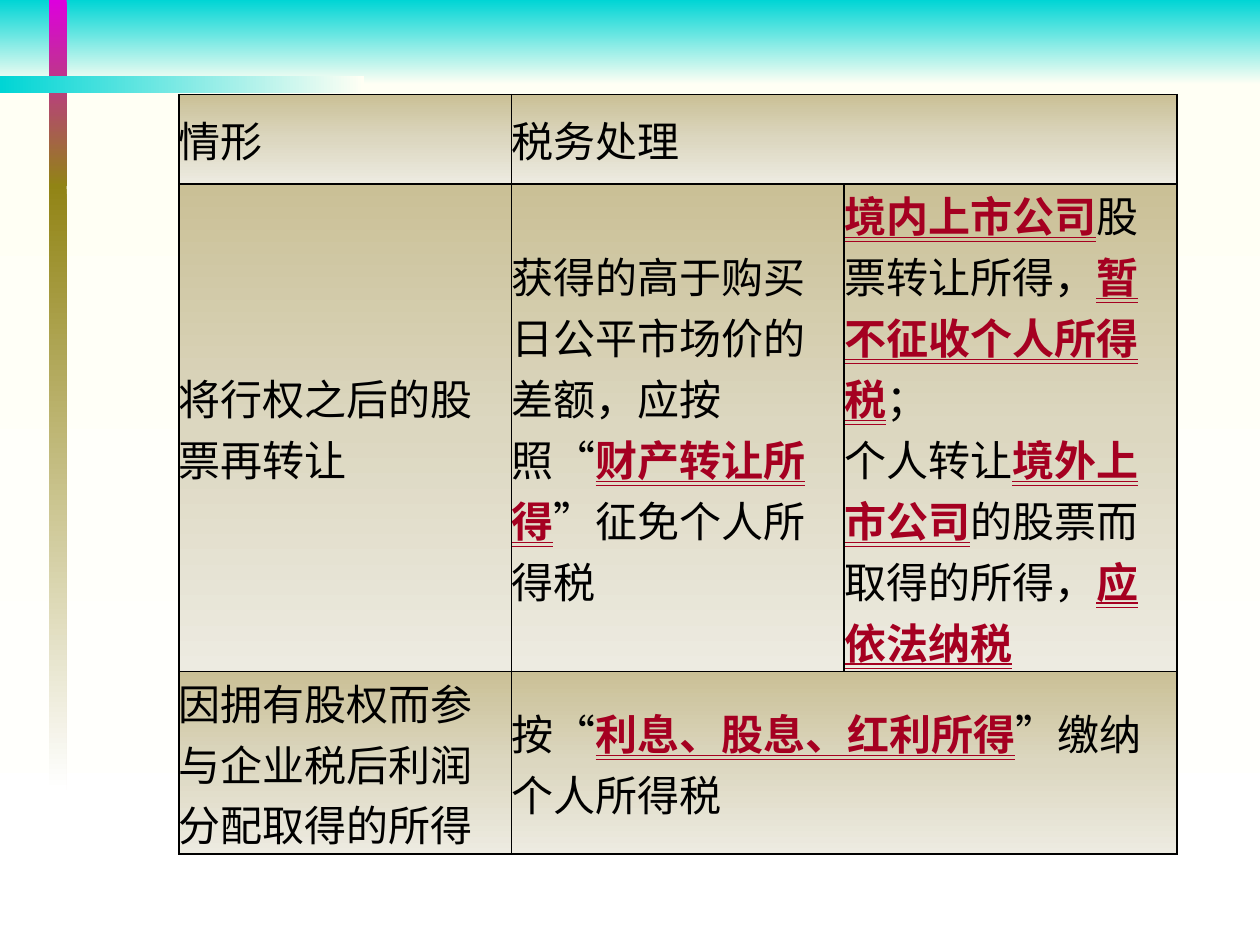
from lxml.etree import SubElement
from pptx import Presentation
from pptx.dml.color import RGBColor
from pptx.enum.shapes import MSO_SHAPE
from pptx.enum.text import MSO_ANCHOR, MSO_UNDERLINE
from pptx.oxml import parse_xml
from pptx.oxml.ns import nsdecls, qn
from pptx.util import Inches, Pt

COLORS = {"cyan": "00D5D5", "cream": "FFFFF4", "white": "FFFFFF",
          "magenta": "DD00DD", "olive": "918415", "black": "000000",
          "red": "A50021", "sand": "CAC096", "beige": "DCD7C0", "pale": "EDEBE1"}
CJK_FONT, LATIN_FONT = "Noto Sans CJK SC", "Times New Roman"
WIDTH, HEIGHT = 10, 7.5

# Background bands: left, top, width, height, gradient colours, angle
BANDS = [
    (0, 0, WIDTH, 0.67, ("cyan", "cream"), 90),
    (0, 0.67, WIDTH, HEIGHT - 0.67, ("cream", "white"), 90),
    (0.39, 0, 0.14, 1.48, ("magenta", "olive"), 90),
    (0.39, 1.46, 0.14, 4.81, ("olive", "white"), 90),
    (0, 0.6, 2.89, 0.14, ("cyan", "cream"), 0),
]

# Each cell is split at "|": every second piece is emphasised; None is merged leftwards
ROWS = [
    ["情形", "税务处理", None],
    ["将行权之后的股票再转让",
     "获得的高于购买日公平市场价的差额，应按照“|财产转让所得|”征免个人所得税",
     "|境内上市公司|股票转让所得，|暂不征收个人所得税|；\n个人转让"
     "|境外上市公司|的股票而取得的所得，|应依法纳税"],
    ["因拥有股权而参与企业税后利润分配取得的所得",
     "按“|利息、股息、红利所得|”缴纳个人所得税", None],
]
ROW_HEIGHTS = [0.71, 3.2, 1.43]
COLUMN_WIDTH = 2.64
TABLE_LEFT, TABLE_TOP = 1.42, 0.75


def set_gradient(fill, element, names, angle):
    """Spread the named colours evenly over a linear gradient."""
    fill.gradient()
    gradient = next(element.iter(qn("a:gradFill")))
    stops = gradient.find(qn("a:gsLst"))
    for stop in list(stops):
        stops.remove(stop)
    for index, name in enumerate(names):
        position = 100000 * index // (len(names) - 1)
        stop = SubElement(stops, qn("a:gs"), pos=str(position))
        SubElement(stop, qn("a:srgbClr"), val=COLORS[name])
    gradient.find(qn("a:lin")).set("ang", str(angle * 60000))


def set_borders(cell):
    properties = cell._tc.get_or_add_tcPr()
    for index, side in enumerate("LRTB"):
        properties.insert(index, parse_xml(
            f'<a:ln{side} {nsdecls("a")} w="12700"><a:solidFill>'
            f'<a:srgbClr val="{COLORS["black"]}"/></a:solidFill></a:ln{side}>'))


def add_run(paragraph, text, latin, emphasis):
    run = paragraph.add_run()
    run.text = text
    formats = {"size": Pt(24), "name": latin, "bold": emphasis,
               "underline": MSO_UNDERLINE.DOUBLE_LINE if emphasis else False}
    for name, value in formats.items():
        setattr(run.font, name, value)
    run.font.color.rgb = RGBColor.from_string(COLORS["red" if emphasis else "black"])
    latin_element = run._r.rPr.find(qn("a:latin"))
    latin_element.addnext(parse_xml(f'<a:ea {nsdecls("a")} typeface="{CJK_FONT}"/>'))


def write_cell(cell, marked_text, latin):
    paragraph = cell.text_frame.paragraphs[0]
    for index, piece in enumerate(marked_text.split("|")):
        for number, line in enumerate(piece.split("\n")):
            if number:
                paragraph.add_line_break()
            if line:
                add_run(paragraph, line, latin, index % 2 == 1)


presentation = Presentation()
presentation.slide_width, presentation.slide_height = Inches(WIDTH), Inches(HEIGHT)
slide = presentation.slides.add_slide(presentation.slide_layouts[6])

# Background bands
for *box, names, angle in BANDS:
    shape = slide.shapes.add_shape(MSO_SHAPE.RECTANGLE, *map(Inches, box))
    shape.shadow.inherit = False
    shape.line.fill.background()
    set_gradient(shape.fill, shape._element.spPr, names, angle)

# Tax treatment table
column_count = len(ROWS[0])
table = slide.shapes.add_table(
    len(ROWS), column_count, Inches(TABLE_LEFT), Inches(TABLE_TOP),
    Inches(COLUMN_WIDTH * column_count), Inches(sum(ROW_HEIGHTS))).table
for column in table.columns:
    column.width = Inches(COLUMN_WIDTH)
cell_format = {"margin_left": 0, "margin_right": 0, "margin_top": 0,
               "margin_bottom": 0, "vertical_anchor": MSO_ANCHOR.MIDDLE}
for row_index, texts in enumerate(ROWS):
    table.rows[row_index].height = Inches(ROW_HEIGHTS[row_index])
    for column_index, text in enumerate(texts):
        cell = table.cell(row_index, column_index)
        for name, value in cell_format.items():
            setattr(cell, name, value)
        set_gradient(cell.fill, cell._tc, ("sand", "beige", "pale"), 90)
        set_borders(cell)
        if text is None:
            table.cell(row_index, column_index - 1).merge(cell)
        else:
            write_cell(cell, text, CJK_FONT if row_index else LATIN_FONT)

presentation.save("out.pptx")
